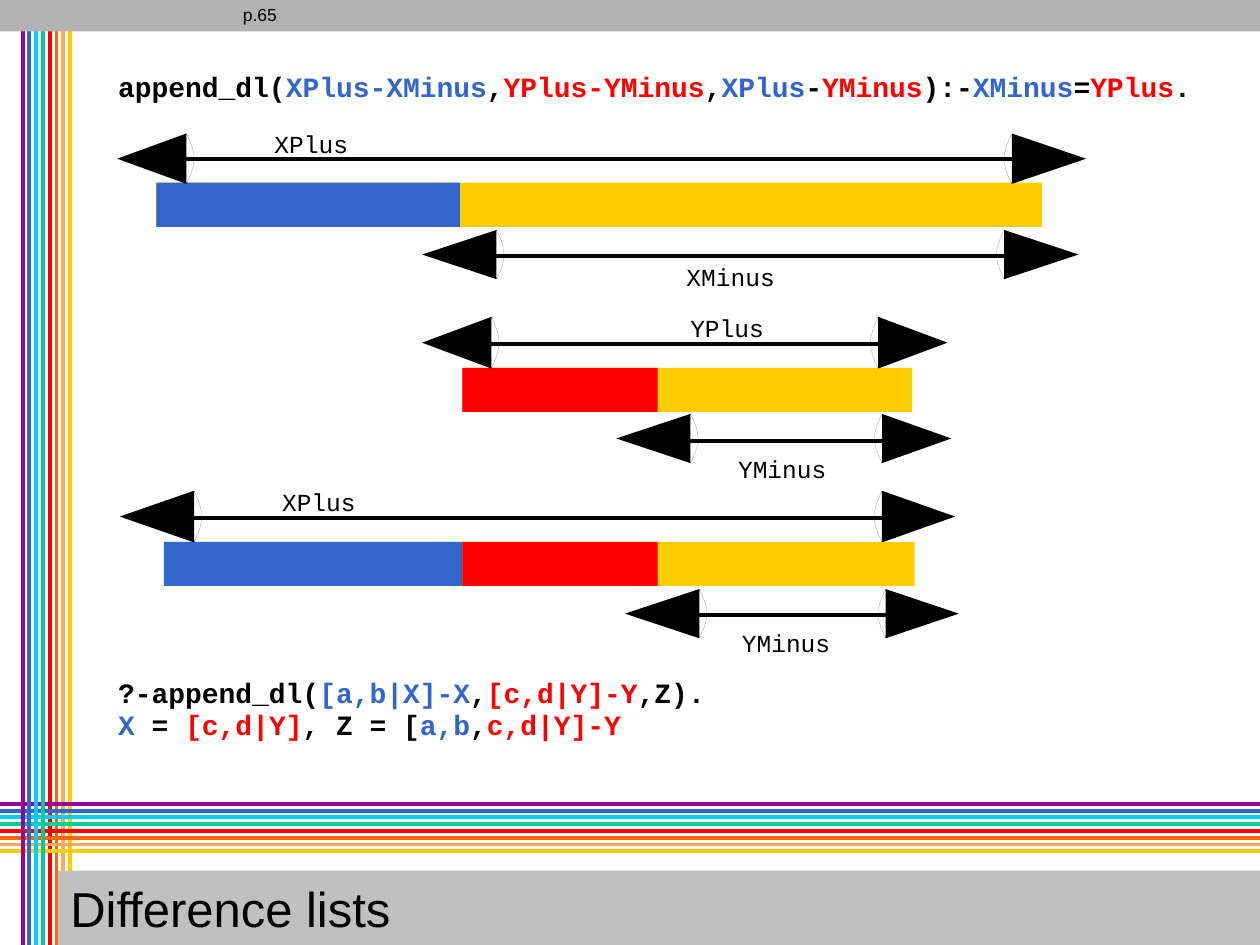
"""Build the slide on appending difference lists."""
from math import pi, sin

from lxml import etree
from pptx import Presentation
from pptx.dml.color import RGBColor
from pptx.enum.shapes import MSO_CONNECTOR, MSO_SHAPE
from pptx.enum.text import MSO_ANCHOR, PP_ALIGN
from pptx.oxml.ns import qn
from pptx.util import Inches, Pt

STRAIGHT = MSO_CONNECTOR.STRAIGHT
RECTANGLE = MSO_SHAPE.RECTANGLE
TOP, MIDDLE = MSO_ANCHOR.TOP, MSO_ANCHOR.MIDDLE
LEFT = PP_ALIGN.LEFT

WIDTH, HEIGHT = 10, 7.5
COLOURS = {
    "purple": "990099", "blue": "3366CC", "sky": "00CCFF", "green": "00CC99",
    "red": "FF0000", "orange": "FF6600", "peach": "FFA953", "yellow": "FFCC00",
    "black": "000000", "header": "B2B2B2", "footer": "C0C0C0",
}
STRIPES = ["purple", "blue", "sky", "green", "red", "orange", "peach", "yellow"]
STRIPE_LEFT, STRIPE_TOP, STRIPE_GAP = 0.18, 6.38, 0.43 / 8

TITLE = "Difference lists"
PAGE_MARK = "p.65"
RULE = [[
    ("append_dl(", "black"), ("XPlus-XMinus", "blue"), (",", "black"),
    ("YPlus-YMinus", "red"), (",", "black"), ("XPlus", "blue"), ("-", "black"),
    ("YMinus", "red"), ("):-", "black"), ("XMinus", "blue"), ("=", "black"),
    ("YPlus", "red"), (".", "black"),
]]
QUERY = [
    [("?-append_dl(", "black"), ("[a,b|X]-X", "blue"), (",", "black"),
     ("[c,d|Y]-Y", "red"), (",Z).", "black")],
    [("X", "blue"), (" = ", "black"), ("[c,d|Y]", "red"), (", Z = [", "black"),
     ("a,b", "blue"), (",", "black"), ("c,d|Y]-Y", "red")],
]

BARS = [
    {"top": 1.45, "edges": [1.24, 3.65, 8.27], "parts": ["blue"]},
    {"top": 2.92, "edges": [3.67, 5.22, 7.24], "parts": ["red"]},
    {"top": 4.3, "edges": [1.3, 3.67, 5.22, 7.26], "parts": ["blue", "red"]},
]
BAR_HEIGHT = 0.35
SPANS = [
    {"y": 1.26, "shaft": 1.26, "tips": (0.93, 8.62), "heads": (0.61, 0.65), "tall": 0.4},
    {"y": 2.02, "shaft": 2.03, "tips": (3.35, 8.56), "heads": (0.65, 0.65), "tall": 0.39},
    {"y": 2.72, "shaft": 2.73, "tips": (3.35, 7.52), "heads": (0.61, 0.61), "tall": 0.41},
    {"y": 3.48, "shaft": 3.5, "tips": (4.89, 7.55), "heads": (0.65, 0.61), "tall": 0.39},
    {"y": 4.1, "shaft": 4.11, "tips": (0.95, 7.58), "heads": (0.65, 0.64), "tall": 0.41},
    {"y": 4.87, "shaft": 4.88, "tips": (4.96, 7.61), "heads": (0.65, 0.64), "tall": 0.39},
]
BULGE, ARC_STEPS, SHAFT_INSET = 0.06, 16, 0.48
LABELS = [
    ("XPlus", 2.08, 1), ("XMinus", 5.35, 2.06), ("YPlus", 5.38, 2.46),
    ("YMinus", 5.76, 3.58), ("XPlus", 2.14, 3.84), ("YMinus", 5.79, 4.96),
]
LABEL_WIDTHS = {5: 0.79, 6: 0.9}


def rgb(name):
    return RGBColor.from_string(COLOURS[name])


def paint(shape, colour):
    shape.shadow.inherit = False
    shape.fill.solid()
    shape.fill.fore_color.rgb = rgb(colour)
    shape.line.fill.background()
    return shape


def add_bar(page, left, top, width, height, colour):
    frame = map(Inches, (left, top, width, height))
    return paint(page.shapes.add_shape(RECTANGLE, *frame), colour)


def add_line(page, start, end, colour, weight):
    line = page.shapes.add_connector(STRAIGHT, *map(Inches, (*start, *end)))
    line.line.color.rgb = rgb(colour)
    line.line.width = Pt(weight)
    etree.SubElement(line._element.spPr, qn("a:effectLst"))


def add_head(page, tip, y, width, tall, side):
    base = tip + side * (width - BULGE)
    arc = []
    for step in range(ARC_STEPS + 1):
        share = step / ARC_STEPS
        x = base + side * BULGE * sin(pi * share)
        arc.append((Inches(x), Inches(y + tall * (share - 0.5))))
    outline = page.shapes.build_freeform(*arc[0])
    outline.add_line_segments(arc[1:] + [(Inches(tip), Inches(y))])
    outline.move_to(*arc[0])
    outline.add_line_segments(arc[1:])
    paint(outline.convert_to_shape(), "black")


def write(box, lines, font="Courier New", size=14, bold=False, spacing=0.9,
          anchor=TOP, wrap=False):
    frame = box.text_frame
    frame.word_wrap = wrap
    frame.vertical_anchor = anchor
    para = frame.paragraphs[0]
    para.alignment = LEFT
    para.line_spacing = spacing
    for number, line in enumerate(lines):
        if number:
            para.add_line_break()
        for text, colour in line:
            span = para.add_run()
            span.text = text
            span.font.name = font
            span.font.size = Pt(size)
            span.font.bold = bold
            span.font.color.rgb = rgb(colour)


def add_text(page, lines, left, top, width, height, **style):
    box = page.shapes.add_textbox(*map(Inches, (left, top, width, height)))
    write(box, lines, **style)


def add_stripes(page, numbers, vertical):
    for number in numbers:
        shift = number * STRIPE_GAP
        if vertical:
            x = STRIPE_LEFT + shift
            ends = (x, 0), (x, HEIGHT)
        else:
            y = STRIPE_TOP + shift
            ends = (WIDTH, y), (0, y)
        add_line(page, *ends, STRIPES[number], 2.25)


def main():
    deck = Presentation()
    deck.slide_width, deck.slide_height = Inches(WIDTH), Inches(HEIGHT)
    page = deck.slides.add_slide(deck.slide_layouts[6])

    add_stripes(page, range(4, 8), vertical=True)
    add_stripes(page, range(8), vertical=False)
    add_stripes(page, range(4), vertical=True)
    add_bar(page, 0, 0, WIDTH, 0.25, "header")
    footer = add_bar(page, 0.46, 6.91, 9.54, 0.6, "footer")
    write(footer, [[(TITLE, "black")]], font="Arial", size=28, spacing=1,
          anchor=MIDDLE, wrap=True)

    for bar in BARS:
        top, edges = bar["top"], bar["edges"]
        add_bar(page, edges[0], top, edges[-1] - edges[0], BAR_HEIGHT, "yellow")
        for start, end, colour in zip(edges, edges[1:], bar["parts"]):
            add_bar(page, start, top, end - start, BAR_HEIGHT, colour)

    for span in SPANS:
        for tip, width, side in zip(span["tips"], span["heads"], (1, -1)):
            add_head(page, tip, span["y"], width, span["tall"], side)
        left, right = span["tips"]
        add_line(page, (left + SHAFT_INSET, span["shaft"]),
                 (right - SHAFT_INSET, span["shaft"]), "black", 2)

    for text, left, top in LABELS:
        add_text(page, [[(text, "black")]], left, top, LABEL_WIDTHS[len(text)], 0.31)
    add_text(page, RULE, 0.84, 0.52, 8.73, 0.35, size=16, bold=True, spacing=0.96)
    add_text(page, [[(PAGE_MARK, "black")]], 1.83, 0, 0.76, 0.25,
             font="Arial", size=10)
    add_text(page, QUERY, 0.84, 5.33, 4.87, 0.61, size=16, bold=True, spacing=0.96)
    deck.save("out.pptx")


if __name__ == "__main__":
    main()
